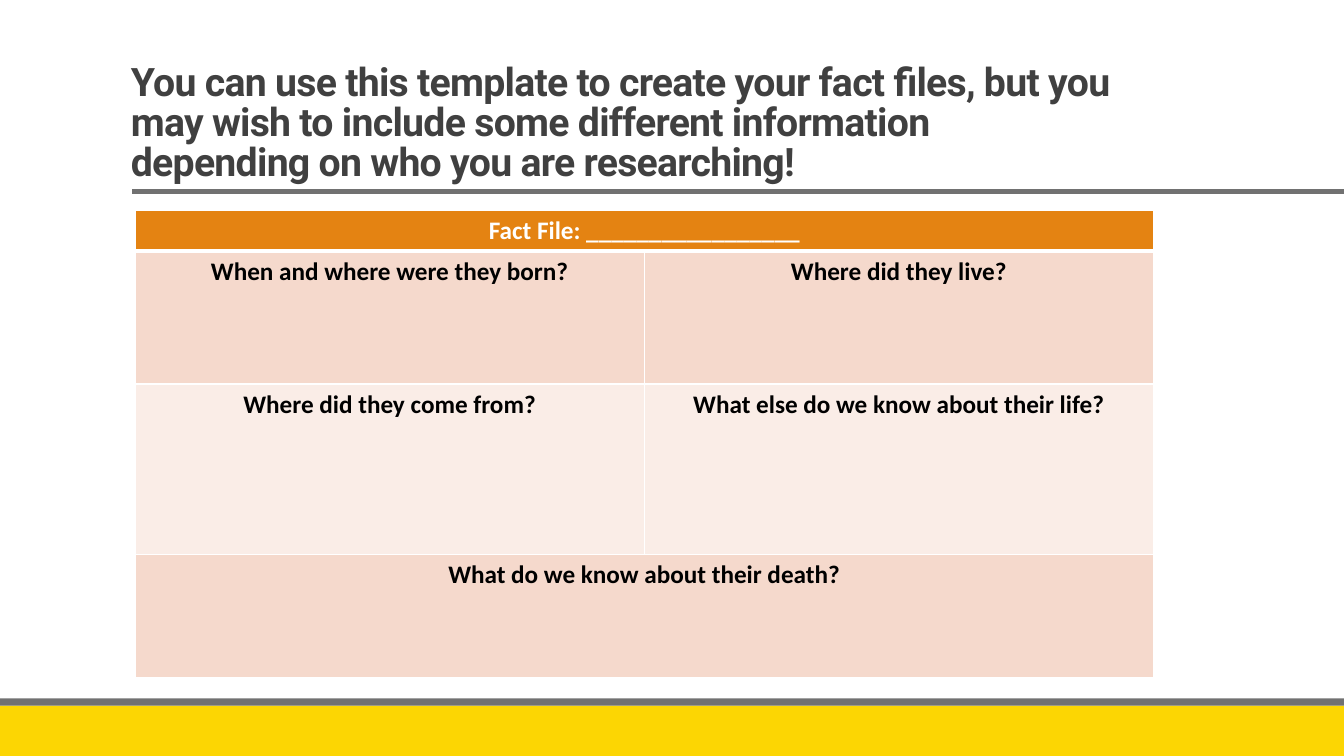
from pptx import Presentation
from pptx.dml.color import RGBColor
from pptx.enum import shapes, text
from pptx.oxml import parse_xml
from pptx.oxml.ns import nsdecls
from pptx.util import Inches, Pt

TITLE = ("You can use this template to create your fact files, but you may wish "
         "to include some different information depending on who you are researching!")
ROWS = [
    (0.4, "head", ["Fact File: _________________"]),
    (1.32, "peach", ["When and where were they born?", "Where did they live?"]),
    (1.69, "pale", ["Where did they come from?", "What else do we know about their life?"]),
    (1.22, "peach", ["What do we know about their death?"]),
]
HEX = {"head": "E48312", "peach": "F5D9CC", "pale": "FAEDE7", "gold": "FCD603",
       "gray": "717171", "thin": "808080", "title": "404040",
       "white": "FFFFFF", "black": "000000"}
WIDE, HIGH = 13.33, 7.5
LEFT, RULE = 1.31, 1.9
BANDS = [(7, 0.5, "gold"), (6.93, 0.07, "gray")]
RULES = [(12.21, "thin", 0.5), (WIDE, "gray", 3)]
GRID = (1.34, 2.09, 10.1)


def rgb(name):
    return RGBColor.from_string(HEX[name])


def write(para, words, font, size, hue):
    run = para.add_run()
    run.text = words
    run.font.name, run.font.size, run.font.bold = font, Pt(size), True
    run.font.color.rgb = rgb(hue)
    return run


def edge(cell, base):
    props = cell._tc.get_or_add_tcPr()
    for spot, side in enumerate("LRTB"):
        width = Pt(base if side == "B" else 1)
        props.insert(spot, parse_xml(
            f'<a:ln{side} {nsdecls("a")} w="{width}"><a:solidFill>'
            f'<a:srgbClr val="{HEX["white"]}"/></a:solidFill></a:ln{side}>'))


def frame(slide):
    for top, tall, hue in BANDS:
        band = slide.shapes.add_shape(shapes.MSO_SHAPE.RECTANGLE, 0, Inches(top),
                                      Inches(WIDE), Inches(tall))
        band.shadow.inherit = False
        band.fill.solid()
        band.fill.fore_color.rgb = rgb(hue)
        band.line.fill.background()
    for end, hue, width in RULES:
        line = slide.shapes.add_connector(shapes.MSO_CONNECTOR.STRAIGHT, Inches(LEFT),
                                          Inches(RULE), Inches(end), Inches(RULE))
        line.line.color.rgb = rgb(hue)
        line.line.width = Pt(width)
        line._element.spPr.append(parse_xml(f'<a:effectLst {nsdecls("a")}/>'))


def title(slide):
    box = slide.shapes.add_textbox(Inches(1.2), Inches(0.31), Inches(9.94), Inches(1.57))
    body = box.text_frame
    body.word_wrap = True
    body.vertical_anchor = text.MSO_ANCHOR.BOTTOM
    para = body.paragraphs[0]
    para.line_spacing = 0.85
    run = write(para, TITLE, "Roboto", 28, "title")
    run.font._element.set("spc", "-50")


def facts(slide):
    left, top, wide = map(Inches, GRID)
    tall = Inches(sum(row[0] for row in ROWS))
    table = slide.shapes.add_table(len(ROWS), 2, left, top, wide, tall).table
    for col in table.columns:
        col.width = wide // 2
    for r, (high, hue, words) in enumerate(ROWS):
        table.rows[r].height = Inches(high)
        pair = [table.cell(r, c) for c in range(2)]
        if len(words) == 1:
            pair[0].merge(pair[1])
        for cell in pair:
            cell.fill.solid()
            cell.fill.fore_color.rgb = rgb(hue)
            edge(cell, 3 if hue == "head" else 1)
        for cell, label in zip(pair, words):
            para = cell.text_frame.paragraphs[0]
            para.alignment = text.PP_ALIGN.CENTER
            write(para, label, "Calibri", 18, "white" if hue == "head" else "black")


def main():
    deck = Presentation()
    deck.slide_width, deck.slide_height = Inches(WIDE), Inches(HIGH)
    slide = deck.slides.add_slide(deck.slide_layouts[6])
    frame(slide)
    title(slide)
    facts(slide)
    deck.save("out.pptx")


if __name__ == "__main__":
    main()
